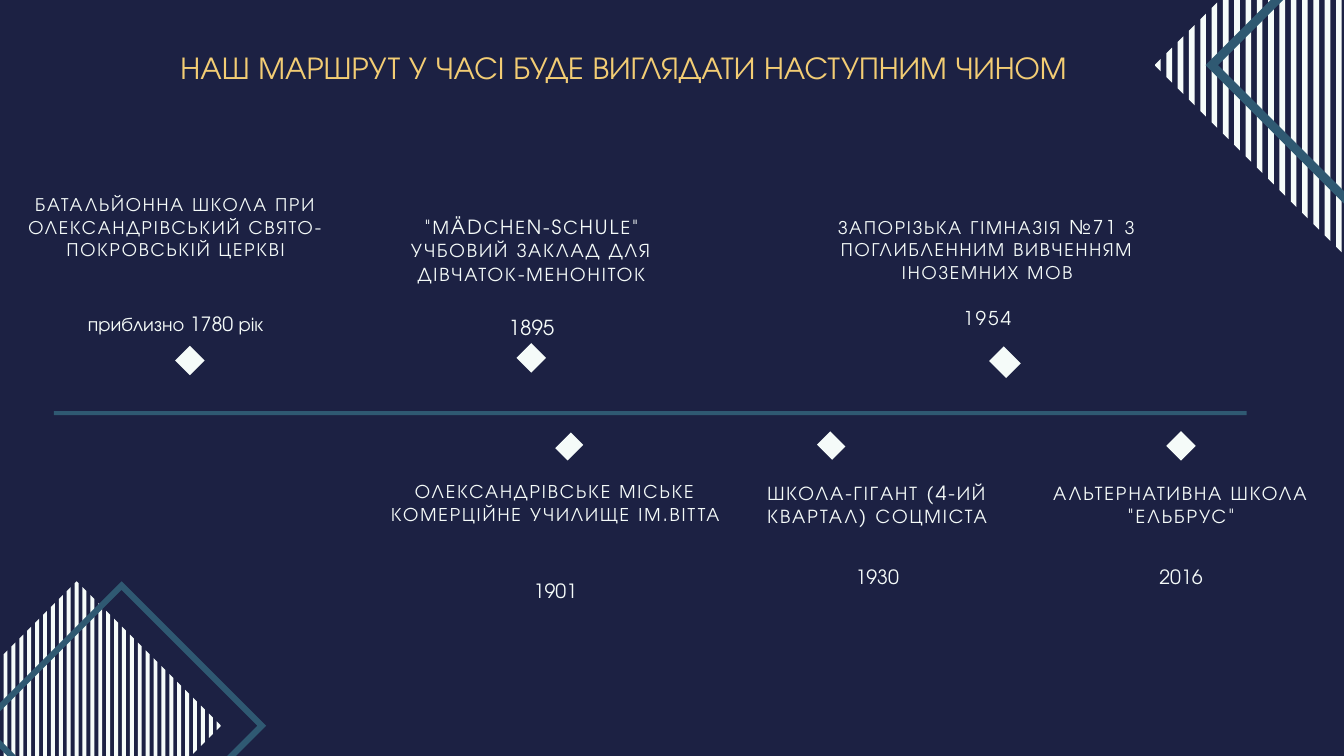
from dataclasses import dataclass

import pptx
import pptx.dml.color
import pptx.enum.shapes
import pptx.enum.text
import pptx.util

Inches = pptx.util.Inches
Pt = pptx.util.Pt


@dataclass(frozen=True)
class Theme:
    font: str = "TeX Gyre Adventor"
    night: str = "1C2143"
    teal: str = "2F5972"
    white: str = "F5FBF9"
    gold: str = "F3CD74"
    title: float = 34
    small: float = 20.4
    label: float = 21
    year: float = 21


THEME = Theme()
STRIPES_PER_SIDE = 18
PITCH_RATIO = 18.3
FRAME_INNER = 0.94

ORNAMENTS = [
    (20.26, 21.02, 0.97, 3.08),
    (1.14, 1.81, 10.8, 2.15),
]

MARKERS = [
    (2.67, 5.21, 0.31, 0.31, 315),
    (7.75, 5.17, 0.31, 0.31, 315),
    (14.8, 5.21, 0.31, 0.36, 315),
    (17.42, 6.48, 0.31, 0.31, 315),
    (8.34, 6.48, 0.26, 0.33, 45),
    (12.23, 6.47, 0.28, 0.32, 315),
]

LABELS = [
    ((0.08, 2.86, 5.07, 1.03),
     ["БАТАЛЬЙОННА ШКОЛА ПРИ ОЛЕКСАНДРІВСЬКИЙ СВЯТО-ПОКРОВСЬКІЙ ЦЕРКВІ"],
     THEME.small, 24.5),
    ((5.29, 3.2, 5.24, 1.4),
     ["\"МÄDСHЕN-SСHULЕ\"", "УЧБОВИЙ ЗАКЛАД ДЛЯ ДІВЧАТОК-МЕНОНІТОК"],
     20.9, 25.1),
    ((12.03, 3.2, 5.32, 2),
     ["ЗАПОРІЗЬКА ГІМНАЗІЯ №71 З ПОГЛИБЛЕННИМ ВИВЧЕННЯМ ІНОЗЕМНИХ МОВ", "1954"],
     THEME.small, 24.5),
    ((14.97, 7.15, 5.21, 0.7), ["АЛЬТЕРНАТИВНА ШКОЛА \"ЕЛЬБРУС\""], THEME.label, 25.2),
    ((5.77, 7.13, 4.99, 1.39),
     ["ОЛЕКСАНДРІВСЬКЕ МІСЬКЕ КОМЕРЦІЙНЕ УЧИЛИЩЕ ІМ.ВІТТА"],
     20.6, 24.7),
    ((10.92, 7.15, 4.27, 0.69), ["ШКОЛА-ГІГАНТ (4-ИЙ КВАРТАЛ) СОЦМІСТА"], THEME.label, 25.2),
]

YEARS = [
    ((0.08, 4.55, 5.07, 0.41), "приблизно 1780 рік", THEME.year, 31.6),
    ((5.29, 4.59, 5.24, 0.42), "1895", 22.1, 33.1),
    ((14.97, 8.32, 5.21, 0.83), "2016", THEME.year, 31.5),
    ((5.77, 8.53, 4.99, 0.83), "1901", THEME.year, 31.5),
    ((10.92, 8.32, 4.27, 0.83), "1930", THEME.year, 31.5),
]


def color(value):
    return pptx.dml.color.RGBColor.from_string(value)


def paint(shape, value):
    shape.shadow.inherit = False
    shape.fill.solid()
    shape.fill.fore_color.rgb = color(value)
    shape.line.fill.background()


def add_outline(page, contours, value):
    contours = [[(Inches(x), Inches(y)) for x, y in points] for points in contours]
    builder = page.shapes.build_freeform(*contours[0][0])
    for index, points in enumerate(contours):
        if index:
            builder.move_to(*points[0])
        builder.add_line_segments(points[1:], close=True)
    paint(builder.convert_to_shape(), value)


def add_striped_diamond(page, center_x, center_y, half):
    pitch = half / PITCH_RATIO
    contours = []
    for step in range(-STRIPES_PER_SIDE, STRIPES_PER_SIDE + 1):
        left = center_x + step * pitch - pitch / 4
        right = left + pitch / 2
        peak = min(max(center_x, left), right)
        edges = [(x, half - abs(x - center_x)) for x in sorted({left, peak, right})]
        top = [(x, center_y - reach) for x, reach in edges]
        bottom = [(x, center_y + reach) for x, reach in reversed(edges)]
        contours.append(top + bottom)
    add_outline(page, contours, THEME.white)


def diamond_points(center_x, center_y, half):
    return [(center_x - half, center_y), (center_x, center_y + half),
            (center_x + half, center_y), (center_x, center_y - half)]


def add_diamond_frame(page, center_x, center_y, half):
    outer = diamond_points(center_x, center_y, half)
    inner = diamond_points(center_x, center_y, half * FRAME_INNER)
    add_outline(page, [outer, inner[::-1]], THEME.teal)


def add_rectangle(page, left, top, width, height, value, rotation=0):
    shape = page.shapes.add_shape(
        pptx.enum.shapes.MSO_SHAPE.RECTANGLE,
        Inches(left), Inches(top), Inches(width), Inches(height))
    shape.rotation = rotation
    paint(shape, value)


def add_text(page, place, lines, size, leading, value=THEME.white, tracking=0):
    box = page.shapes.add_textbox(*(Inches(length) for length in place))
    frame = box.text_frame
    frame.word_wrap = True
    frame.auto_size = pptx.enum.text.MSO_AUTO_SIZE.SHAPE_TO_FIT_TEXT
    frame.margin_left = frame.margin_right = 0
    frame.margin_top = frame.margin_bottom = 0
    for index, line in enumerate(lines):
        para = frame.add_paragraph() if index else frame.paragraphs[0]
        para.alignment = pptx.enum.text.PP_ALIGN.CENTER
        para.line_spacing = Pt(leading)
        if index and line.isdigit():
            para.space_before = Pt(leading)
        para.font.name = THEME.font
        para.font.size = Pt(size)
        para.font.color.rgb = color(value)
        span = para.add_run()
        span.text = line
        if tracking:
            span._r.get_or_add_rPr().set("spc", str(round(tracking * 100)))


def main():
    deck = pptx.Presentation()
    deck.slide_width = Inches(20)
    deck.slide_height = Inches(11.25)
    page = deck.slides.add_slide(deck.slide_layouts[6])
    page.background.fill.solid()
    page.background.fill.fore_color.rgb = color(THEME.night)

    for stripes_x, frame_x, center_y, half in ORNAMENTS:
        add_striped_diamond(page, stripes_x, center_y, half)
        add_diamond_frame(page, frame_x, center_y, half)

    add_rectangle(page, 0.8, 6.12, 17.75, 0.06, THEME.teal)
    for left, top, width, height, rotation in MARKERS:
        add_rectangle(page, left, top, width, height, THEME.white, rotation)

    add_text(page, (2.05, 0.62, 14.47, 0.64),
             ["НАШ МАРШРУТ У ЧАСІ БУДЕ ВИГЛЯДАТИ НАСТУПНИМ ЧИНОМ"],
             THEME.title, 47.6, THEME.gold)
    for place, lines, size, leading in LABELS:
        add_text(page, place, lines, size, leading, tracking=size / 10)
    for place, year, size, leading in YEARS:
        add_text(page, place, [year], size, leading)

    deck.save("out.pptx")


if __name__ == "__main__":
    main()
